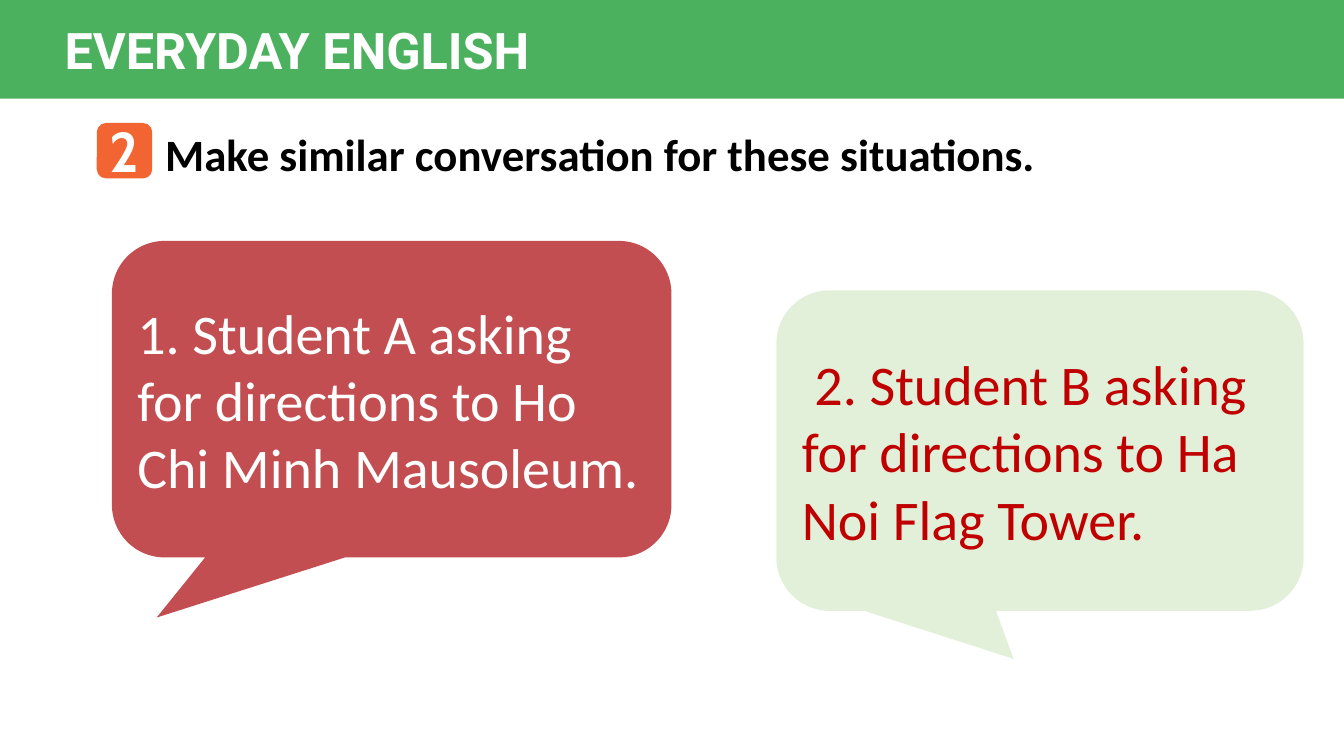
from pptx import Presentation
from pptx.dml.color import RGBColor
from pptx.enum.shapes import MSO_SHAPE
from pptx.enum.text import MSO_ANCHOR, MSO_AUTO_SIZE, PP_ALIGN
from pptx.util import Inches, Pt

GREEN = RGBColor(0x4C, 0xB1, 0x5F)
ORANGE = RGBColor(0xF2, 0x65, 0x32)
RED = RGBColor(0xC2, 0x4E, 0x51)
PALE_GREEN = RGBColor(0xE2, 0xF0, 0xD9)
DARK_RED = RGBColor(0xC0, 0x00, 0x00)
WHITE = RGBColor(0xFF, 0xFF, 0xFF)
BLACK = RGBColor(0x00, 0x00, 0x00)

TITLE_FORMAT = {"name": "Roboto", "size": Pt(36), "bold": True}
NUMBER_FORMAT = {"name": "Cabin", "size": Pt(40), "bold": True}
TASK_FORMAT = {"name": "Calibri", "size": Pt(32), "bold": True}
SITUATION_FORMAT = {"name": "Calibri", "size": Pt(40), "bold": False}


def write(frame, wording, font_format, color,
          align=PP_ALIGN.LEFT, anchor=MSO_ANCHOR.TOP):
    frame.word_wrap = True
    frame.auto_size = MSO_AUTO_SIZE.NONE
    frame.vertical_anchor = anchor
    paragraph = frame.paragraphs[0]
    paragraph.alignment = align
    run = paragraph.add_run()
    run.text = wording
    for attribute, value in font_format.items():
        setattr(run.font, attribute, value)
    run.font.color.rgb = color


def add_filled(slide, preset, fill, left, top, width, height):
    shape = slide.shapes.add_shape(
        preset, Inches(left), Inches(top), Inches(width), Inches(height))
    shape.shadow.inherit = False
    shape.fill.solid()
    shape.fill.fore_color.rgb = fill
    shape.line.fill.background()
    return shape


def add_label(slide, left, top, width, height, *text, **layout):
    label = slide.shapes.add_textbox(
        Inches(left), Inches(top), Inches(width), Inches(height))
    write(label.text_frame, *text, **layout)


def add_header(slide, left, top, width, height):
    add_filled(slide, MSO_SHAPE.RECTANGLE, GREEN, left, top, width, height)
    title = slide.shapes.title
    title.left, title.top = Inches(left + 0.54), Inches(top + 0.14)
    title.width, title.height = Inches(5), Inches(0.71)
    write(title.text_frame, "EVERYDAY ENGLISH", TITLE_FORMAT, WHITE)
    # The title placeholder has to lie in front of the band.
    title.element.getparent().append(title.element)


def add_task(slide, left, top, number, instruction):
    add_filled(slide, MSO_SHAPE.ROUNDED_RECTANGLE, ORANGE,
               left, top, 0.55, 0.55)
    add_label(slide, left + 0.03, top - 0.11, 0.49, 0.77,
              number, NUMBER_FORMAT, WHITE, align=PP_ALIGN.CENTER)
    add_label(slide, left + 0.58, top - 0.01, 11.47, 0.64,
              instruction, TASK_FORMAT, BLACK)


def add_situation(slide, box, tip, fill, color, wording):
    """Add a speech bubble; tip is its pointer's offset from the centre."""
    bubble = add_filled(
        slide, MSO_SHAPE.ROUNDED_RECTANGULAR_CALLOUT, fill, *box)
    bubble.adjustments[0], bubble.adjustments[1] = tip
    write(bubble.text_frame, wording, SITUATION_FORMAT, color,
          anchor=MSO_ANCHOR.MIDDLE)


def build_conversation_slide(presentation):
    slide = presentation.slides.add_slide(presentation.slide_layouts[5])
    add_task(slide, 0.96, 1.22, "2",
             "Make similar conversation for these situations.")
    add_header(slide, 0, 0, 13.33, 0.98)
    add_situation(
        slide, (1.11, 2.39, 5.55, 3.14), (-0.42, 0.69), RED, WHITE,
        "1. Student A asking for directions to Ho Chi Minh Mausoleum.")
    add_situation(
        slide, (7.7, 2.88, 5.23, 3.18), (-0.05, 0.65), PALE_GREEN, DARK_RED,
        " 2. Student B asking for directions to Ha Noi Flag Tower.")


def main():
    presentation = Presentation()
    presentation.slide_width = Inches(13.33)
    presentation.slide_height = Inches(7.5)
    build_conversation_slide(presentation)
    presentation.save("out.pptx")


if __name__ == "__main__":
    main()
